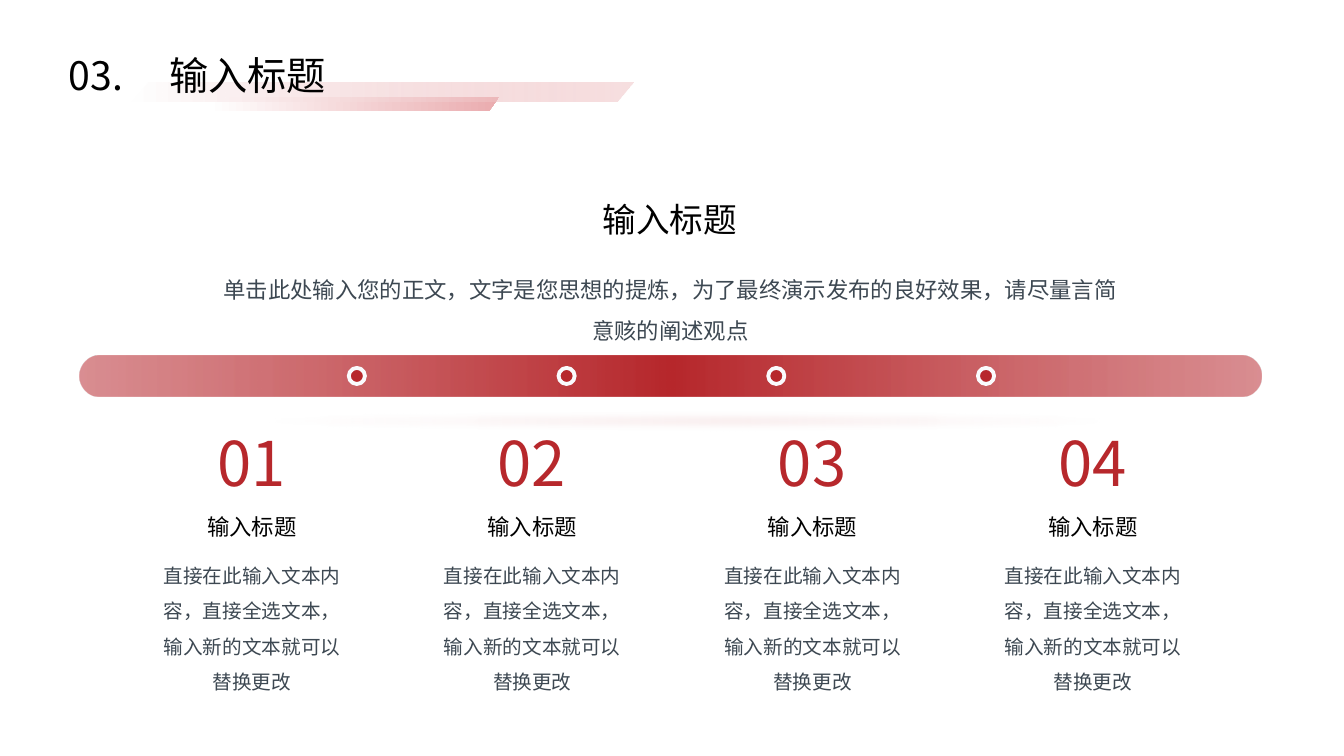
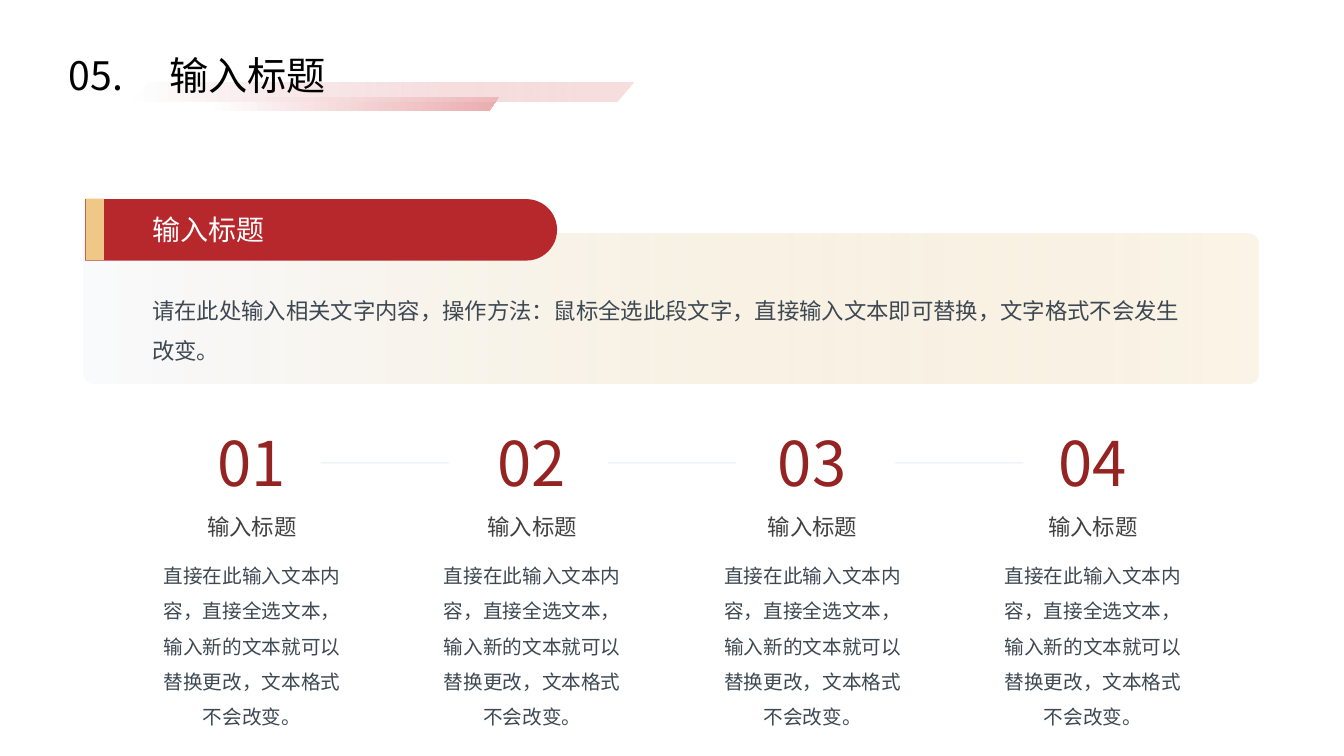
from lxml import etree
from pptx import Presentation
from pptx import util as u
from pptx.dml.color import RGBColor
from pptx.enum import shapes, text
from pptx.oxml.ns import qn

FONT = "Noto Sans CJK SC"
BLACK = RGBColor(0x00, 0x00, 0x00)
WHITE = RGBColor(0xFF, 0xFF, 0xFF)
CHARCOAL = RGBColor(0x40, 0x40, 0x40)
SLATE = RGBColor(0x3D, 0x48, 0x52)
RED = RGBColor(0xB7, 0x28, 0x2C)
DARK_RED = RGBColor(0x94, 0x23, 0x22)
ROSE = RGBColor(0xCA, 0x5F, 0x64)
PINK = RGBColor(0xEA, 0xAC, 0xAF)
GOLD = RGBColor(0xED, 0xC8, 0x86)
SAND = RGBColor(0xF2, 0xDE, 0xB7)
MIST = RGBColor(0xFA, 0xFB, 0xFD)
STEEL = RGBColor(0xB8, 0xC5, 0xD0)

SHAPE = shapes.MSO_SHAPE
LEFT, CENTER = text.PP_ALIGN.LEFT, text.PP_ALIGN.CENTER
HEADING = "输入标题"
COLUMN_LEFT, COLUMN_PITCH, COLUMN_COUNT = 1.43, 2.78, 4
COLUMN_TEXT = "直接在此输入文本内容，直接全选文本，输入新的文本就可以替换更改"


class Designer:
    """Holds the shared style and draws on the current slide."""

    def __init__(self):
        self.deck = Presentation()
        self.deck.slide_width = u.Inches(13.33)
        self.deck.slide_height = u.Inches(7.5)
        self.layout = self.deck.slide_layouts[1]
        self.page = None

    def start(self, number):
        self.page = self.deck.slides.add_slide(self.layout)
        if len(self.deck.slides) == 1:
            self.title_bands()
        title = self.page.shapes.title
        self.place(title, 0.58, 0.46, 3.32, 0.57)
        self.set_text(title, f"{number}.\t{HEADING}", 28, BLACK, tab=0.71)

    def title_bands(self):
        for left, top, width, height, slant, alpha in (
            (2.06, 0.96, 2.89, 0.14, 0.7, 100),
            (1.3, 0.82, 4.98, 0.19, 0.87, 38),
        ):
            band = self.shape(SHAPE.PARALLELOGRAM, left, top, width, height, adjust=(slant,))
            self.gradient(band, (0, WHITE, 100), (100, PINK, alpha))
            self.layout.shapes.element.append(band.element)

    def place(self, box, left, top, width, height):
        sizes = dict(left=left, top=top, width=width, height=height)
        for name, value in sizes.items():
            setattr(box, name, u.Inches(value))

    def set_text(self, box, words, size, color, align=LEFT, spacing=1, after=0, wrap=True, tab=None):
        frame = box.text_frame
        frame_format = dict(
            word_wrap=wrap,
            auto_size=text.MSO_AUTO_SIZE.SHAPE_TO_FIT_TEXT,
            vertical_anchor=text.MSO_ANCHOR.TOP,
        )
        para = frame.paragraphs[0]
        para_format = dict(
            alignment=align,
            line_spacing=spacing,
            space_before=u.Pt(0),
            space_after=u.Pt(after),
        )
        span = para.add_run()
        span.text = words
        span_format = dict(name=FONT, size=u.Pt(size), bold=False)
        for target, values in (
            (frame, frame_format),
            (para, para_format),
            (span.font, span_format),
        ):
            for name, value in values.items():
                setattr(target, name, value)
        span.font.color.rgb = color
        etree.SubElement(span.font._element, qn("a:ea"), typeface=FONT)
        settings = para._p.get_or_add_pPr()
        settings.set("marL", "0")
        settings.set("indent", "0")
        etree.SubElement(settings, qn("a:buNone"))
        if tab:
            stops = etree.SubElement(settings, qn("a:tabLst"))
            etree.SubElement(stops, qn("a:tab"), pos=str(u.Inches(tab)), algn="l")

    def label(self, left, top, width, height, words, size, color, **layout):
        bounds = map(u.Inches, (left, top, width, height))
        self.set_text(self.page.shapes.add_textbox(*bounds), words, size, color, **layout)

    def body(self, left, top, width, height, words, align=LEFT):
        box = self.page.placeholders[1]
        self.place(box, left, top, width, height)
        self.set_text(box, words, 16, SLATE, align, spacing=1.5, after=10)
        self.page.shapes.element.append(box.element)

    def shape(self, kind, left, top, width, height, fill=None, adjust=(), rotation=0):
        bounds = map(u.Inches, (left, top, width, height))
        shape = self.page.shapes.add_shape(kind, *bounds)
        shape.shadow.inherit = False
        shape.rotation = rotation
        shape.line.fill.background()
        for index, value in enumerate(adjust):
            shape.adjustments[index] = value
        if fill is not None:
            shape.fill.solid()
            shape.fill.fore_color.rgb = fill
        return shape

    def fade(self, color_element, alpha):
        etree.SubElement(color_element, qn("a:alpha"), val=str(alpha * 1000))

    def gradient(self, shape, *stops):
        shape.fill.gradient()
        shape.fill.gradient_angle = 0
        stop_list = shape.element.spPr.find(f".//{qn('a:gsLst')}")
        for old_stop in list(stop_list):
            stop_list.remove(old_stop)
        for position, color, alpha in stops:
            stop = etree.SubElement(stop_list, qn("a:gs"), pos=str(position * 1000))
            self.fade(etree.SubElement(stop, qn("a:srgbClr"), val=str(color)), alpha)

    def soften(self, shape, radius):
        effects = shape.element.spPr.find(qn("a:effectLst"))
        etree.SubElement(effects, qn("a:softEdge"), rad=str(u.Inches(radius)))

    def dot(self, left, top, size):
        dot = self.shape(SHAPE.OVAL, left, top, size, size, RED)
        dot.line.color.rgb = MIST
        dot.line.width = u.Pt(2.75)

    def rule(self, left, top, width):
        ends = map(u.Inches, (left, top, left + width, top))
        line = self.page.shapes.add_connector(shapes.MSO_CONNECTOR.STRAIGHT, *ends)
        line.line.color.rgb = STEEL
        line.line.width = u.Pt(1.25)
        properties = line.element.spPr
        self.fade(properties.find(f".//{qn('a:srgbClr')}"), 20)
        etree.SubElement(properties, qn("a:effectLst"))

    def columns(self, words, height, number_color, heading_color):
        for index in range(COLUMN_COUNT):
            left = COLUMN_LEFT + index * COLUMN_PITCH
            self.label(left + 0.51, 4.17, 1.11, 0.84, f"{index + 1:02}", 44, number_color, align=CENTER)
            self.label(left + 0.47, 5.04, 1.2, 0.37, HEADING, 16, heading_color, align=CENTER)
            self.label(left, 5.43, 2.14, height, words, 14, SLATE, align=CENTER, spacing=1.5)


def timeline_slide(designer):
    designer.start("03")
    glow = designer.shape(SHAPE.RECTANGLE, 1.6, 4.02, 10.13, 0.3)
    designer.gradient(glow, (1, ROSE, 0), (56, ROSE, 19), (100, ROSE, 0))
    designer.soften(glow, 0.1)
    bar = designer.shape(SHAPE.ROUNDED_RECTANGLE, 0.79, 3.53, 11.72, 0.4, adjust=(0.5,))
    designer.gradient(bar, (0, ROSE, 70), (50, RED, 100), (100, ROSE, 70))
    for index in range(COLUMN_COUNT):
        designer.dot(3.46 + index * 2.08, 3.65, 0.16)
    designer.body(
        2.04, 2.56, 9.22, 0.86,
        "单击此处输入您的正文，文字是您思想的提炼，为了最终演示发布的良好效果，请尽量言简意赅的阐述观点",
        CENTER,
    )
    designer.label(5.88, 1.92, 1.53, 0.5, HEADING, 24, BLACK, align=CENTER, wrap=False)
    designer.columns(COLUMN_TEXT, 1.51, RED, BLACK)


def panel_slide(designer):
    designer.start("05")
    panel = designer.shape(SHAPE.ROUNDED_RECTANGLE, 0.83, 2.32, 11.65, 1.48, adjust=(0.07,))
    designer.gradient(panel, (0, MIST, 100), (100, SAND, 32))
    designer.shape(
        SHAPE.ROUND_2_SAME_RECTANGLE, 2.88, -0.06, 0.61, 4.68, RED, adjust=(0.5, 0), rotation=90
    )
    designer.shape(SHAPE.RECTANGLE, 0.85, 1.97, 0.18, 0.61, GOLD)
    designer.body(
        1.41, 2.76, 10.48, 0.86,
        "请在此处输入相关文字内容，操作方法：鼠标全选此段文字，直接输入文本即可替换，文字格式不会发生改变。",
    )
    designer.label(1.41, 2.06, 1.4, 0.44, HEADING, 20, WHITE, wrap=False)
    designer.columns(f"{COLUMN_TEXT}，文本格式不会改变。", 1.87, DARK_RED, CHARCOAL)
    for index in range(COLUMN_COUNT - 1):
        designer.rule(3.18 + index * 2.85, 4.59, 1.27)


def main():
    designer = Designer()
    timeline_slide(designer)
    panel_slide(designer)
    designer.deck.save("out.pptx")


if __name__ == "__main__":
    main()
